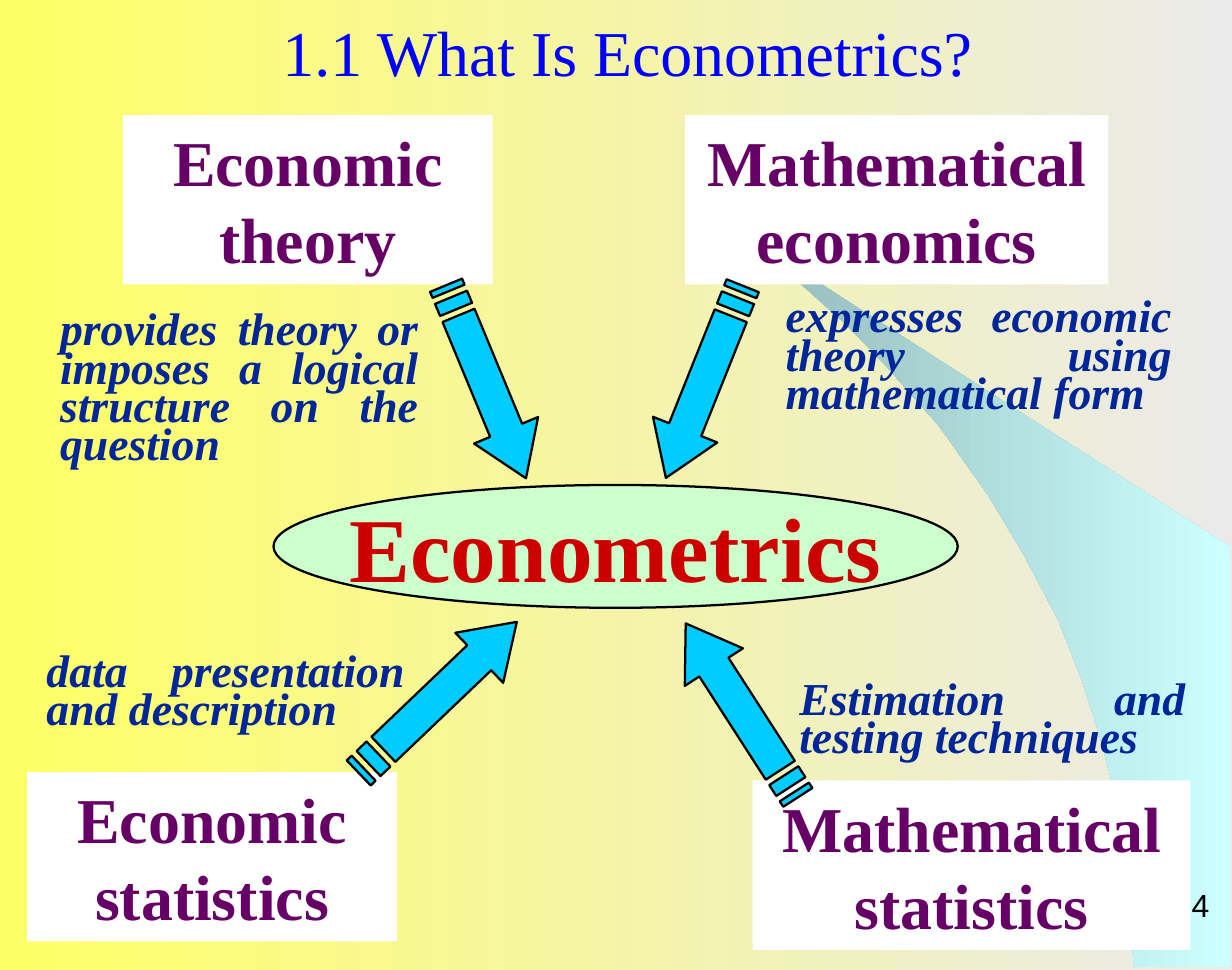
import dataclasses

import lxml.etree
import pptx
import pptx.dml.color
import pptx.dml.fill
import pptx.enum.shapes
import pptx.enum.text
import pptx.oxml.ns
import pptx.shapes.autoshape
import pptx.shapes.base
import pptx.slide
import pptx.util

Cm = pptx.util.Cm
Align = pptx.enum.text.PP_ALIGN
Anchor = pptx.enum.text.MSO_ANCHOR
Preset = pptx.enum.shapes.MSO_SHAPE
Point = tuple[float, float]
SERIF = "Times New Roman"


@dataclasses.dataclass
class Area:
    left: float
    top: float
    width: float
    height: float


@dataclasses.dataclass
class TextStyle:
    size: int
    color: str
    font: dict[str, object]
    para: dict[str, object]
    frame: dict[str, object]


@dataclasses.dataclass
class Label:
    text: str
    area: Area


@dataclasses.dataclass
class Arrow:
    area: Area
    rotation: float


TITLE = TextStyle(28, "0000FF", {"name": SERIF, "bold": False},
                  {"alignment": Align.CENTER}, {"vertical_anchor": Anchor.MIDDLE})
FIELD = TextStyle(28, "660066", {"name": SERIF, "bold": True},
                  {"alignment": Align.CENTER}, {"vertical_anchor": Anchor.MIDDLE})
NOTE = TextStyle(20, "002699", {"name": SERIF, "bold": True, "italic": True},
                 {"alignment": Align.JUSTIFY, "line_spacing": 0.7,
                  "space_before": pptx.util.Pt(0)},
                 {"vertical_anchor": Anchor.TOP, "margin_left": Cm(0.51), "margin_right": Cm(0.51)})
HUB = TextStyle(40, "CC0000", {"name": SERIF, "bold": True},
                {"alignment": Align.CENTER},
                {"vertical_anchor": Anchor.MIDDLE, "word_wrap": False})
NUMBER = TextStyle(14, "000000", {"name": "Arial"}, {"alignment": Align.RIGHT},
                   {"vertical_anchor": Anchor.BOTTOM, "margin_top": 0, "margin_bottom": 0})

FIELDS = [
    Label("Economic theory", Area(1.9, 1.78, 5.72, 2.62)),
    Label("Mathematical economics", Area(10.59, 1.78, 6.55, 2.62)),
    Label("Mathematical statistics", Area(11.64, 12.07, 6.77, 2.62)),
    Label("Economic statistics", Area(0.42, 11.94, 5.72, 2.62)),
]
BODY_NOTE = Label("Estimation and testing techniques", Area(11.85, 10.46, 6.99, 1.27))
NOTES = [
    Label("provides theory or imposes a logical structure on the question",
          Area(0.42, 4.75, 6.56, 2.54)),
    Label("expresses economic theory using mathematical form", Area(11.64, 4.55, 6.99, 2.34)),
    Label("data presentation and description", Area(0.21, 10.03, 6.56, 1.47)),
]
ARROWS = [
    Arrow(Area(5.9, 5.37, 3.23, 1.07), 67.5),
    Arrow(Area(9.29, 5.37, 3.2, 1.07), 111.8),
    Arrow(Area(5.08, 10.25, 3.38, 1.07), 316.3),
    Arrow(Area(9.87, 10.45, 3.2, 1.07), 237.2),
]
SWOOSH: list[Point] = [
    (17.53, 14.96), (19.02, 14.96), (19.02, 8.46), (11.23, 3.45), (11.89, 3.99), (12.45, 4.45),
    (13.06, 5), (13.64, 5.59), (14.53, 6.6), (15.29, 7.67), (15.85, 8.61), (16.36, 9.58),
    (16.74, 10.54), (17.02, 11.43), (17.22, 12.19), (17.4, 13.11), (17.48, 13.92),
]


def rgb(code: str) -> pptx.dml.color.RGBColor:
    return pptx.dml.color.RGBColor.from_string(code)


def apply(target: object, values: dict[str, object]) -> None:
    for name, value in values.items():
        setattr(target, name, value)


def place(box: pptx.shapes.base.BaseShape, area: Area) -> None:
    apply(box, {name: Cm(value) for name, value in dataclasses.asdict(area).items()})


def write(box: pptx.shapes.autoshape.Shape, text: str, style: TextStyle) -> None:
    frame = box.text_frame
    apply(frame, {"word_wrap": True, "auto_size": pptx.enum.text.MSO_AUTO_SIZE.NONE} | style.frame)
    para = frame.paragraphs[0]
    apply(para, style.para)
    span = para.add_run()
    span.text = text
    apply(span.font, {"size": pptx.util.Pt(style.size)} | style.font)
    span.font.color.rgb = rgb(style.color)


def paint(box: pptx.shapes.autoshape.Shape, fill: str, outlined: bool) -> None:
    box.shadow.inherit = False
    box.fill.solid()
    box.fill.fore_color.rgb = rgb(fill)
    if outlined:
        box.line.color.rgb = rgb("000000")
        box.line.width = pptx.util.Pt(1)
    else:
        box.line.fill.background()


def shade(fill: pptx.dml.fill.FillFormat, colors: tuple[str, str]) -> None:
    fill.gradient()
    fill.gradient_angle = 0
    for stop, color in zip(fill.gradient_stops, colors):
        stop.color.rgb = rgb(color)


def add_outline(page: pptx.slide.Slide, contours: list[list[Point]],
                left: float = 0, top: float = 0) -> pptx.shapes.autoshape.Shape:
    outlines = [[(Cm(x), Cm(y)) for x, y in contour] for contour in contours]
    builder = page.shapes.build_freeform(*outlines[0][0])
    for number, points in enumerate(outlines):
        if number:
            builder.move_to(*points[0])
        builder.add_line_segments(points[1:], close=True)
    return builder.convert_to_shape(Cm(left), Cm(top))


def add_box(page: pptx.slide.Slide, preset: Preset, label: Label, fill: str,
            outlined: bool, style: TextStyle) -> None:
    box = page.shapes.add_shape(preset, 0, 0, 0, 0)
    place(box, label.area)
    paint(box, fill, outlined)
    write(box, label.text, style)


def add_text(page: pptx.slide.Slide, label: Label, style: TextStyle) -> None:
    box = page.shapes.add_textbox(0, 0, 0, 0)
    place(box, label.area)
    write(box, label.text, style)


def add_arrow(page: pptx.slide.Slide, arrow: Arrow) -> None:
    length, height = arrow.area.width, arrow.area.height
    upper, lower = height / 4, height * 3 / 4
    neck, unit = length - height * 3 / 4, length / 32
    head = [(5 * unit, upper), (neck, upper), (neck, 0), (length, height / 2),
            (neck, height), (neck, lower), (5 * unit, lower)]
    stripes = [[(start * unit, upper), (end * unit, upper), (end * unit, lower),
                (start * unit, lower)] for start, end in ((2, 4), (0, 1))]
    shape = add_outline(page, [head, *stripes], arrow.area.left, arrow.area.top)
    paint(shape, "00CCFF", True)
    shape.rotation = arrow.rotation


def add_swoosh(page: pptx.slide.Slide) -> None:
    swoosh = add_outline(page, [SWOOSH])
    swoosh.shadow.inherit = False
    shade(swoosh.fill, ("92B6B6", "CCFFFF"))
    swoosh.line.fill.background()
    swoosh.element.getparent().insert(2, swoosh.element)


def fill_placeholders(page: pptx.slide.Slide) -> None:
    title, body = page.shapes.title, page.placeholders[1]
    place(title, Area(0.66, 0.09, 18.08, 1.4))
    write(title, "1.1 What Is Econometrics?", TITLE)
    place(body, BODY_NOTE.area)
    write(body, BODY_NOTE.text, NOTE)
    properties = body.text_frame.paragraphs[0]._p.get_or_add_pPr()
    properties.set("marL", "0")
    properties.set("indent", "0")
    lxml.etree.SubElement(properties, pptx.oxml.ns.qn("a:buNone"))


def main() -> None:
    deck = pptx.Presentation()
    apply(deck, {"slide_width": Cm(19.05), "slide_height": Cm(15)})
    page = deck.slides.add_slide(deck.slide_layouts[1])
    shade(page.background.fill, ("FFFF66", "EAEAEA"))
    fill_placeholders(page)
    add_swoosh(page)
    add_text(page, Label("4", Area(14.99, 13.45, 3.96, 0.84)), NUMBER)
    for field in FIELDS:
        add_box(page, Preset.RECTANGLE, field, "FFFFFF", False, FIELD)
    for note in NOTES:
        add_text(page, note, NOTE)
    for arrow in ARROWS:
        add_arrow(page, arrow)
    hub = Label("Econometrics", Area(4.23, 7.5, 10.58, 1.9))
    add_box(page, Preset.OVAL, hub, "CCFFCC", True, HUB)
    deck.save("out.pptx")


if __name__ == "__main__":
    main()
